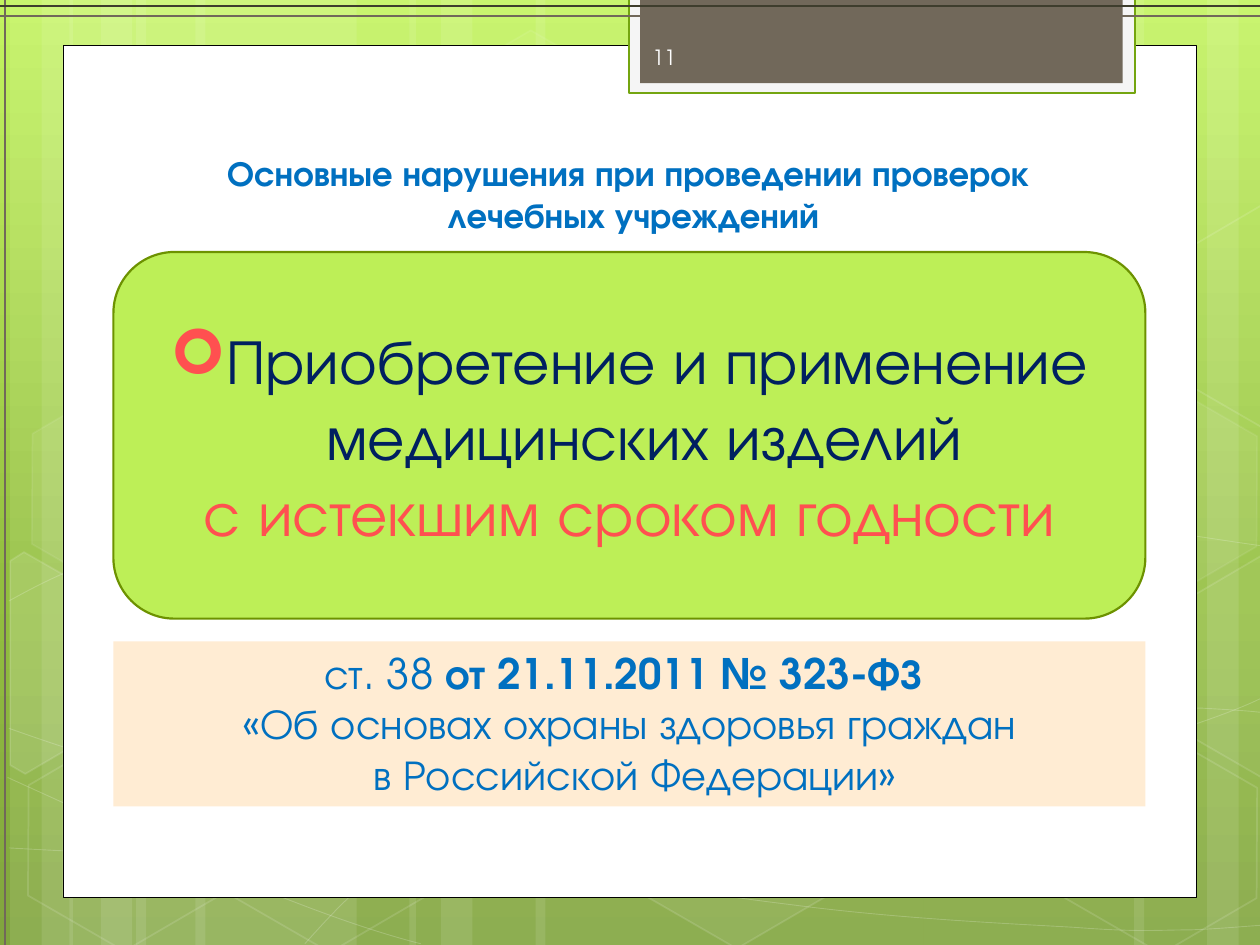
from copy import deepcopy
from dataclasses import dataclass
from math import cos, radians, sin

from lxml import etree
from pptx import Presentation
from pptx.dml.color import RGBColor
from pptx.enum.shapes import MSO_CONNECTOR, MSO_SHAPE
from pptx.enum.text import MSO_ANCHOR, MSO_AUTO_SIZE, PP_ALIGN
from pptx.oxml.ns import qn
from pptx.util import Inches, Pt

RECT, HEXAGON, ROUNDED = MSO_SHAPE.RECTANGLE, MSO_SHAPE.HEXAGON, MSO_SHAPE.ROUNDED_RECTANGLE
STRAIGHT = MSO_CONNECTOR.STRAIGHT
CENTER, LEFT = PP_ALIGN.CENTER, PP_ALIGN.LEFT
TOP, MIDDLE = MSO_ANCHOR.TOP, MSO_ANCHOR.MIDDLE
FIXED, GROW = MSO_AUTO_SIZE.NONE, MSO_AUTO_SIZE.SHAPE_TO_FIT_TEXT


@dataclass
class Theme:
    font: str = "TeX Gyre Adventor"
    bullet_font: str = "Wingdings"
    backdrop: tuple = ((0, "C3F35F"), (0.62, "93BF3F"), (1, "81A53E"))
    white: str = "FFFFFF"
    black: str = "000000"
    tab_frame: str = "F5F5F5"
    tab_edge: str = "74A510"
    taupe: str = "71685A"
    dark: str = "3E3D2D"
    blue: str = "0070C0"
    navy: str = "002060"
    red: str = "FF5050"
    lime: str = "BDEF57"
    olive: str = "6D9200"
    cream: str = "FFECD3"
    title_size: int = 20
    violation_size: int = 36
    law_size: int = 24
    number_size: int = 12
    rule_width: float = 1.25


theme = Theme()


def paint(shape, fill=None, line=None, width=1, fill_alpha=100, line_alpha=100):
    """Set fill and outline, with opacity in percent."""
    shape.shadow.inherit = False
    if fill:
        shape.fill.solid()
        shape.fill.fore_color.rgb = RGBColor.from_string(fill)
    else:
        shape.fill.background()
    if line:
        shape.line.color.rgb = RGBColor.from_string(line)
        shape.line.width = Pt(width)
    else:
        shape.line.fill.background()
    for query, alpha in (("./a:solidFill/a:srgbClr", fill_alpha),
                         ("./a:ln/a:solidFill/a:srgbClr", line_alpha)):
        for color in shape.element.spPr.xpath(query):
            if alpha < 100:
                etree.SubElement(color, qn("a:alpha"), val=str(alpha * 1000))


def outline(points, close):
    """Draw a freeform through points given in inches."""
    vertices = [(Inches(x), Inches(y)) for x, y in points]
    builder = shapes.build_freeform(*vertices[0])
    builder.add_line_segments(vertices[1:], close=close)
    return builder.convert_to_shape()


prs = Presentation()
prs.slide_width, prs.slide_height = Inches(10), Inches(7.5)
slide = prs.slides.add_slide(prs.slide_layouts[5])
shapes = slide.shapes

# Background gradient
backdrop = slide.background.fill
backdrop.gradient()
backdrop.gradient_angle = 270
stop_list = slide.element.find(".//" + qn("a:gsLst"))
stop_list.insert(1, deepcopy(stop_list[0]))
for stop, (position, color) in zip(backdrop.gradient_stops, theme.backdrop):
    stop.position = position
    stop.color.rgb = RGBColor.from_string(color)

# Translucent vertical bands: left, width, rotation
for left, width, turn in (
        (1.08, 1.75, 0), (0.08, 0.5, 0), (0.33, 0.83, 0), (1.55, 1.75, 0),
        (0.55, 0.5, 0), (0.8, 0.83, 0), (7.33, 1.75, 180), (9.58, 0.5, 180),
        (9, 0.83, 180), (4.25, 3.08, 0), (3.25, 0.5, 0), (3.5, 0.83, 0)):
    band = shapes.add_shape(RECT, Inches(left), 0, Inches(width), prs.slide_height)
    band.rotation = turn
    paint(band, theme.white, fill_alpha=10)

# Waves: a start point, then three Bezier points per segment
waves = (
    [(0.07, 6.73), (0.61, 6.76), (1.15, 6.79), (1.9, 6.78), (2.65, 6.77), (3.58, 6.75),
     (4.58, 6.65), (5.58, 6.55), (7, 6.36), (7.92, 6.17), (8.83, 5.98), (9.77, 5.68),
     (10.07, 5.51)],
    [(0.07, 4.77), (0.36, 4.61), (0.65, 4.46), (1.21, 4.31), (1.78, 4.16), (2.59, 3.94),
     (3.47, 3.87), (4.36, 3.8), (5.44, 3.79), (6.54, 3.87), (7.64, 3.95), (9.47, 4.26),
     (10.07, 4.34)],
    [(0.06, 6.17), (1.27, 6.72), (2.47, 7.27), (3.34, 7.49)],
    [(0.07, 5.78), (0.38, 5.89), (0.7, 6), (1.28, 6.16), (1.86, 6.31), (2.73, 6.56),
     (3.57, 6.73), (4.4, 6.9), (5.45, 7.08), (6.28, 7.18), (7.11, 7.29), (8, 7.33),
     (8.53, 7.36), (9.05, 7.4), (9.19, 7.38), (9.45, 7.38), (9.71, 7.37), (9.89, 7.35),
     (10.07, 7.34)],
    [(2.42, 7.49), (2.6, 7.29), (2.78, 7.09), (3.02, 6.91), (3.26, 6.73), (3.6, 6.53),
     (3.88, 6.39), (4.16, 6.25), (4.33, 6.19), (4.7, 6.09), (5.06, 5.99), (5.73, 5.85),
     (6.08, 5.78), (6.44, 5.71), (6.49, 5.71), (6.8, 5.69), (7.11, 5.66), (7.6, 5.63),
     (7.94, 5.62), (8.29, 5.61), (8.86, 5.62), (8.86, 5.62), (8.86, 5.62), (9.53, 5.62),
     (9.53, 5.62), (9.71, 5.63), (9.88, 5.64), (9.97, 5.65), (10.06, 5.66), (10.03, 5.65),
     (10.06, 5.66)],
)
for points in waves:
    wave = outline(points, False)
    segments = wave.element.spPr.xpath(".//a:lnTo")
    for first in range(0, len(segments), 3):
        bezier = etree.Element(qn("a:cubicBezTo"))
        segments[first].addprevious(bezier)
        for segment in segments[first:first + 3]:
            bezier.append(segment[0])
            segment.getparent().remove(segment)
    paint(wave, None, theme.white, 0.5, line_alpha=20)

# Hexagons: left, top, fill opacity (0 for none), line opacity
TILT = 30
for left, top, fill_alpha, line_alpha in (
        (3.34, 0.36, 4, 8), (4.97, 5.89, 6, 12), (0.11, 5.91, 0, 12),
        (0.14, 3.12, 7, 8), (1.74, 5.92, 0, 12), (7.53, 4.53, 10, 12),
        (8.34, 5.93, 0, 12), (8.34, 3.14, 7, 8)):
    cell = shapes.add_shape(HEXAGON, Inches(left), Inches(top), Inches(1.75), Inches(1.52))
    cell.rotation = TILT
    cell.adjustments[0], cell.adjustments[1] = 0.285, 1.155
    paint(cell, theme.white if fill_alpha else None, theme.white, 1, fill_alpha, line_alpha)

# Hexagons cut by the slide edge, tilted about their centres
right_cut = [(9.26, 4.85), (10.01, 4.41), (10.09, 4.46), (10.09, 6.13), (10.02, 6.17), (9.26, 5.73)]
left_cut = [(0.08, 4.45), (0.19, 4.38), (0.96, 4.82), (0.95, 5.7), (0.2, 6.14), (0.08, 6.07)]
upper_cut = [(x, y - 2.78) for x, y in right_cut]
c, s = cos(radians(TILT)), sin(radians(TILT))
for corners, (mid_x, mid_y), fill_alpha in ((left_cut, (0.36, 5.35), 10),
                                            (right_cut, (9.85, 5.2), 4),
                                            (upper_cut, (9.85, 2.42), 0)):
    upright = [(mid_x + (x - mid_x) * c + (y - mid_y) * s,
                mid_y - (x - mid_x) * s + (y - mid_y) * c) for x, y in corners]
    cut_cell = outline(upright, True)
    cut_cell.rotation = TILT
    paint(cut_cell, theme.white if fill_alpha else None, theme.white, 1, fill_alpha, 12)

# Page panel and number tab
for box, fill, edge, width in (
        ((0.5, 0.36, 9, 6.76), theme.white, theme.black, 0.5),
        ((4.99, -0.02, 4.02, 0.76), theme.tab_frame, theme.tab_edge, theme.rule_width),
        ((5.08, -0.02, 3.83, 0.68), theme.taupe, None, 0)):
    paint(shapes.add_shape(RECT, *map(Inches, box)), fill, edge, width)

# Edge rules
for ends, color in (((10, 0.13, 0, 0.13), theme.taupe), ((0.04, 0, 0.04, 7.5), theme.taupe),
                    ((0, 0.05, 10, 0.05), theme.dark)):
    rule = shapes.add_connector(STRAIGHT, *map(Inches, ends))
    rule.line.color.rgb = RGBColor.from_string(color)
    rule.line.width = Pt(theme.rule_width)
    etree.SubElement(rule.element.spPr, qn("a:effectLst"))

# Title, moved in front of the panel
title = shapes.title
title.left, title.top, title.width, title.height = map(Inches, (0.66, 1.15, 8.66, 0.77))
shapes.element.append(title.element)

# Violation, law reference and slide number
violation = shapes.add_shape(ROUNDED, *map(Inches, (0.9, 2, 8.19, 2.91)))
paint(violation, theme.lime, theme.olive, theme.rule_width)
law = shapes.add_shape(RECT, *map(Inches, (0.9, 5.09, 8.19, 1.31)))
paint(law, theme.cream)
number = shapes.add_textbox(*map(Inches, (5.08, 0.25, 1.46, 0.4)))

# Bullet of the violation
bullet = violation.text_frame.paragraphs[0]._p.get_or_add_pPr()
bullet.set("marL", str(Inches(0.38)))
bullet.set("indent", str(-Inches(0.38)))
bullet_color = etree.SubElement(bullet, qn("a:buClr"))
etree.SubElement(bullet_color, qn("a:srgbClr"), val=theme.red)
etree.SubElement(bullet, qn("a:buFont"), typeface=theme.bullet_font)
etree.SubElement(bullet, qn("a:buChar"), char="➢")

# Wording: paragraphs of runs, each run as text, colour, bold
for holder, size, align, anchor, fit, paragraphs in (
        (title, theme.title_size, CENTER, TOP, GROW, (
            [("Основные нарушения при проведении проверок", theme.blue, True)],
            [(" лечебных учреждений", theme.blue, True)])),
        (violation, theme.violation_size, CENTER, MIDDLE, FIXED, (
            [("Приобретение и применение медицинских изделий ", theme.navy, False)],
            [("с истекшим сроком годности", theme.red, False)])),
        (law, theme.law_size, CENTER, TOP, GROW, (
            [("ст. 38 ", theme.blue, False), ("от 21.11.2011 № 323-ФЗ ", theme.blue, True)],
            [("«Об основах охраны здоровья граждан", theme.blue, False)],
            [(" в Российской Федерации»", theme.blue, False)])),
        (number, theme.number_size, LEFT, MIDDLE, FIXED, ([("11", theme.white, False)],))):
    frame = holder.text_frame
    frame.word_wrap, frame.auto_size, frame.vertical_anchor = True, fit, anchor
    for index, runs in enumerate(paragraphs):
        paragraph = frame.add_paragraph() if index else frame.paragraphs[0]
        paragraph.alignment = align
        for text, color, bold in runs:
            run = paragraph.add_run()
            run.text = text
            run.font.name, run.font.size, run.font.bold = theme.font, Pt(size), bold
            run.font.color.rgb = RGBColor.from_string(color)

prs.save("out.pptx")
